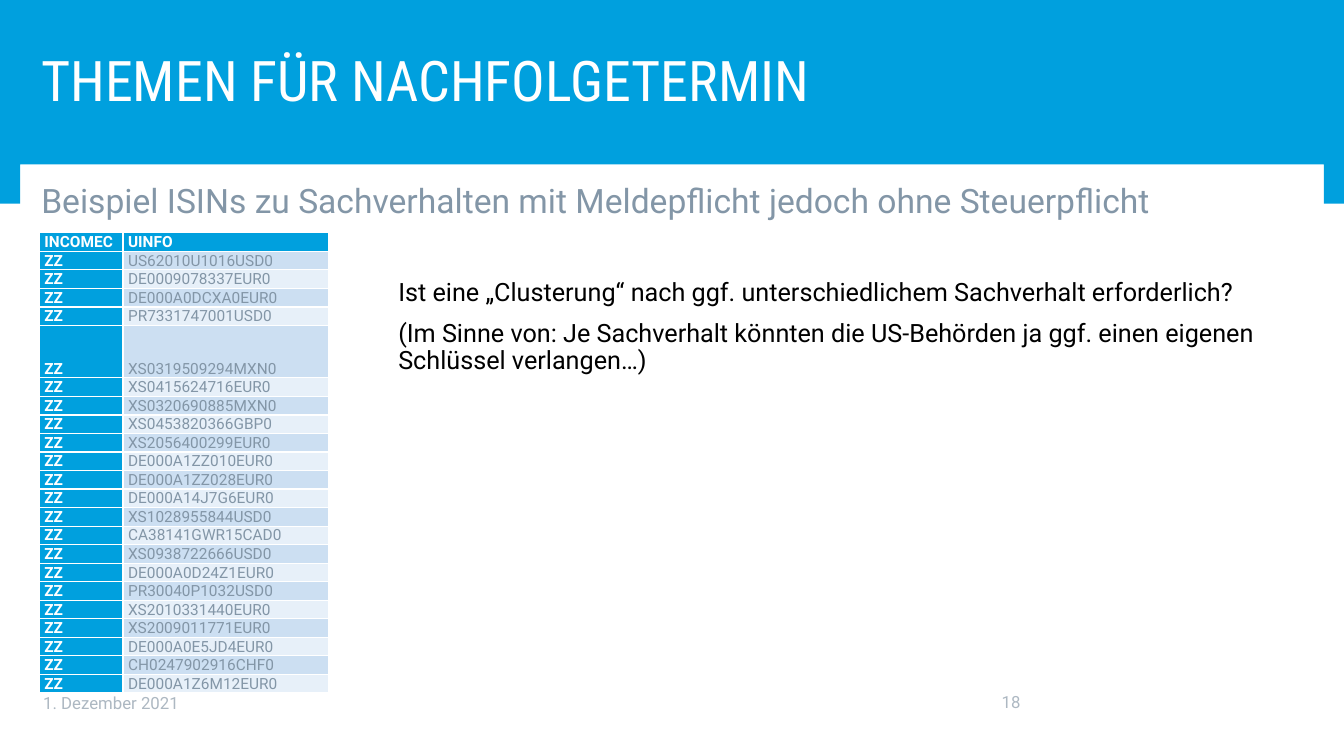
from lxml.etree import SubElement as Sub
from pptx import Presentation
from pptx.dml.color import RGBColor as RGB
from pptx.enum.text import MSO_ANCHOR as ANC, MSO_AUTO_SIZE as AUTO, PP_ALIGN as AL
from pptx.oxml.ns import qn
from pptx.util import Inches, Pt

TITLE = "THEMEN FÜR NACHFOLGETERMIN"
LEAD = ["Beispiel ISINs zu Sachverhalten mit Meldepflicht jedoch ohne Steuerpflicht"]
BODY = [
    "Ist eine „Clusterung“ nach ggf. unterschiedlichem Sachverhalt erforderlich?",
    "(Im Sinne von: Je Sachverhalt könnten die US-Behörden ja ggf. einen eigenen "
    "Schlüssel verlangen…)",
]
DATE, PAGE = "1. Dezember 2021", "18"
HEAD = ("INCOMEC", "UINFO")
CODE = "ZZ"
ISINS = [
    "US62010U1016USD0", "DE0009078337EUR0", "DE000A0DCXA0EUR0", "PR7331747001USD0",
    "XS0319509294MXN0", "XS0415624716EUR0", "XS0320690885MXN0", "XS0453820366GBP0",
    "XS2056400299EUR0", "DE000A1ZZ010EUR0", "DE000A1ZZ028EUR0", "DE000A14J7G6EUR0",
    "XS1028955844USD0", "CA38141GWR15CAD0", "XS0938722666USD0", "DE000A0D24Z1EUR0",
    "PR30040P1032USD0", "XS2010331440EUR0", "XS2009011771EUR0", "DE000A0E5JD4EUR0",
    "CH0247902916CHF0", "DE000A1Z6M12EUR0",
]
HEX = {"blue": "00A0DE", "white": "FFFFFF", "black": "000000", "slate": "8396A7",
       "pale": "ADB8C2", "odd": "CCDFF2", "even": "E7F0F9"}
WIDE, HIGH = 13.33, 7.5
EDGE, SPAN = 0.41, 12.52
COLS = (0.83, 2.04)
ROW, TALL, TALL_AT = 0.17, 0.52, 5


def tint(name):
    return RGB.from_string(HEX[name])


def style(para, size, color, face="Roboto", bold=False):
    for run in para.runs:
        font = run.font
        font.size, font.name, font.bold = Pt(size), face, bold
        font.color.rgb = tint(color)


def place(shape, box):
    shape.left, shape.top, shape.width, shape.height = map(Inches, box)
    frame = shape.text_frame
    frame.margin_left = frame.margin_right = frame.margin_top = frame.margin_bottom = 0
    frame.word_wrap, frame.auto_size = True, AUTO.NONE
    return frame


def fill_list(shape, box, lines, size, color, lead):
    frame = place(shape, box)
    frame.vertical_anchor = ANC.TOP
    frame.text = "\n".join(lines)
    for i, para in enumerate(frame.paragraphs):
        props = para._p.get_or_add_pPr()
        props.set("marL", "0")
        props.set("indent", "0")
        para.line_spacing, para.space_before = lead, Pt(10 if i else 0)
        Sub(props, qn("a:buNone"))
        style(para, size, color)


def add_frame(slide):
    side, top, low = 0.2, 1.63, 2.02
    spots = [(WIDE, 0), (WIDE, low), (WIDE - side, low), (WIDE - side, top),
             (side, top), (side, low), (0, low)]
    pen = slide.shapes.build_freeform(0, 0)
    pen.add_line_segments([(Inches(x), Inches(y)) for x, y in spots])
    band = pen.convert_to_shape()
    band.shadow.inherit = False
    band.fill.solid()
    band.fill.fore_color.rgb = tint("blue")
    band.line.fill.background()
    slide.shapes._spTree.insert(2, band._element)


def add_foot(slide, box, text, align):
    frame = slide.shapes.add_textbox(*map(Inches, box)).text_frame
    frame.word_wrap, frame.vertical_anchor = True, ANC.MIDDLE
    frame.text = text
    frame.paragraphs[0].alignment = align
    style(frame.paragraphs[0], 12, "pale")


def add_grid(slide):
    rows = [HEAD] + [(CODE, isin) for isin in ISINS]
    highs = [TALL if i == TALL_AT else ROW for i in range(len(rows))]
    box = (0.39, 2.31, sum(COLS), sum(highs))
    grid = slide.shapes.add_table(len(rows), len(COLS), *map(Inches, box)).table
    grid.first_col = True
    for col, wide in zip(grid.columns, COLS):
        col.width = Inches(wide)
    for r, texts in enumerate(rows):
        grid.rows[r].height = Inches(highs[r])
        for c, text in enumerate(texts):
            cell = grid.cell(r, c)
            key = r == 0 or c == 0
            cell.margin_left = cell.margin_right = Inches(0.05)
            cell.margin_top = cell.margin_bottom = 0
            cell.vertical_anchor = ANC.BOTTOM
            cell.fill.solid()
            cell.fill.fore_color.rgb = tint("blue" if key else "odd" if r % 2 else "even")
            cell.text = text
            style(cell.text_frame.paragraphs[0], 11, "white" if key else "slate", bold=key)


def main():
    deck = Presentation()
    deck.slide_width, deck.slide_height = Inches(WIDE), Inches(HIGH)
    slide = deck.slides.add_slide(deck.slide_layouts[3])
    title, body, lead = slide.placeholders
    add_frame(slide)

    frame = place(title, (EDGE, 0.32, SPAN, 1.02))
    frame.vertical_anchor = ANC.MIDDLE
    frame.text = TITLE
    para = frame.paragraphs[0]
    para.alignment, para.line_spacing = AL.LEFT, 0.9
    style(para, 40, "white", "Roboto Condensed")

    fill_list(body, (3.95, 2.77, 8.98, 2.22), BODY, 18, "black", 0.9)
    fill_list(lead, (EDGE, 1.78, SPAN, 0.63), LEAD, 24, "slate", 1.0)
    add_foot(slide, (0.33, 6.77, 3, 0.4), DATE, AL.LEFT)
    add_foot(slide, (7.22, 6.76, 3, 0.4), PAGE, AL.RIGHT)
    add_grid(slide)
    deck.save("out.pptx")


if __name__ == "__main__":
    main()
